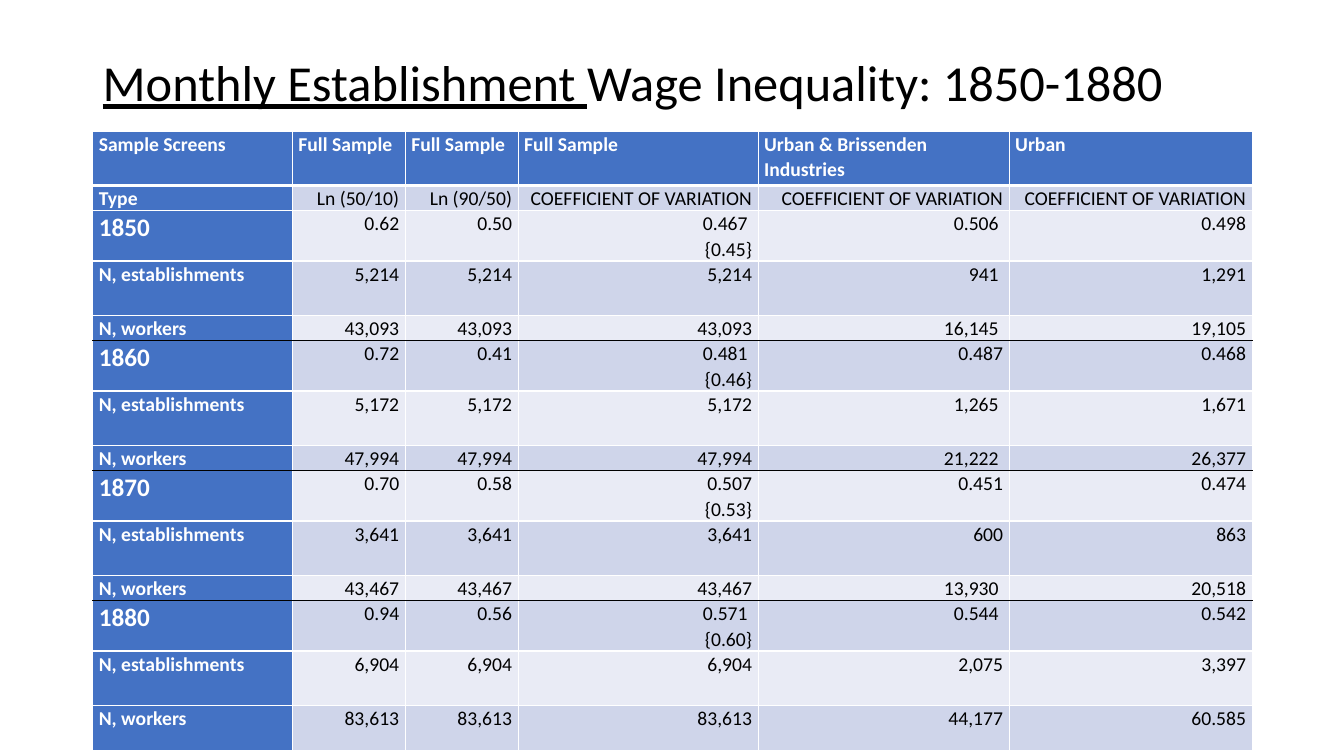
from lxml.etree import SubElement
from pptx import Presentation
from pptx.dml.color import RGBColor
from pptx.enum.text import MSO_ANCHOR, PP_ALIGN
from pptx.oxml.ns import qn
from pptx.util import Inches, Pt

FONT = "Calibri"
BLUE, BAND_DARK, BAND_LIGHT = "4472C4", "CFD5EA", "E9EBF5"
WHITE, BLACK = "FFFFFF", "000000"
COL_WIDTHS = [1.98, 1.12, 1.12, 2.38, 2.49, 2.41]
ROW_HEIGHTS = [0.54] + [0.18, 0.36, 0.54] * 4 + [0.45]
YEARS = ["1850", "1860", "1870", "1880"]
ROWS = [
    ["Sample Screens", "Full Sample", "Full Sample", "Full Sample",
     "Urban & Brissenden Industries", "Urban"],
    ["Type", "Ln (50/10)", "Ln (90/50)"] + ["COEFFICIENT OF VARIATION"] * 3,
    ["1850", "0.62", "0.50", "0.467 \v{0.45}", "0.506 ", "0.498"],
    ["N, establishments"] + ["5,214"] * 3 + ["941 ", "1,291"],
    ["N, workers"] + ["43,093"] * 3 + ["16,145 ", "19,105"],
    ["1860", "0.72", "0.41", "0.481 \v{0.46}", "0.487", "0.468"],
    ["N, establishments"] + ["5,172"] * 3 + ["1,265 ", "1,671"],
    ["N, workers"] + ["47,994"] * 3 + ["21,222 ", "26,377"],
    ["1870", "0.70", "0.58", "0.507\v {0.53}", "0.451", "0.474"],
    ["N, establishments"] + ["3,641"] * 3 + ["600", "863"],
    ["N, workers"] + ["43,467"] * 3 + ["13,930 ", "20,518"],
    ["1880", "0.94", "0.56", "0.571 \v{0.60}", "0.544 ", "0.542"],
    ["N, establishments"] + ["6,904"] * 3 + ["2,075", "3,397"],
    ["N, workers"] + ["83,613"] * 3 + ["44,177", "60.585"],
]


def rgb(color):
    return RGBColor.from_string(color)


def style_run(r, size, color, bold=False):
    r.font.name = FONT
    r.font.size = Pt(size)
    r.font.color.rgb = rgb(color)
    r.font.bold = bold


def set_border(cell, side, color, width):
    ln = SubElement(cell._tc.get_or_add_tcPr(), qn(f"a:ln{side}"), w=str(Pt(width)))
    fill = SubElement(ln, qn("a:solidFill"))
    SubElement(fill, qn("a:srgbClr"), val=color)


def add_title(slide, left, top, width, height):
    tf = slide.shapes.add_textbox(
        Inches(left), Inches(top), Inches(width), Inches(height)).text_frame
    tf.word_wrap = True
    tf.vertical_anchor = MSO_ANCHOR.MIDDLE
    p = tf.paragraphs[0]
    p.line_spacing = 0.9
    for text, underline in [("Monthly Establishment ", True),
                            ("Wage Inequality: 1850-1880", False)]:
        r = p.add_run()
        r.text = text
        style_run(r, 36, BLACK)
        r.font.underline = underline


def fill_cell(cell, text, row, col):
    is_label = row == 0 or col == 0
    opens_year = row > 2 and ROWS[row][0] in YEARS
    closes_year = row + 1 < len(ROWS) and row > 1 and ROWS[row + 1][0] in YEARS
    set_border(cell, "L", WHITE, 1)
    set_border(cell, "R", WHITE, 1)
    set_border(cell, "T", BLACK if opens_year else WHITE, 3 if row == 1 else 1)
    set_border(cell, "B", BLACK if closes_year else WHITE, 3 if row == 0 else 1)
    cell.fill.solid()
    band = BAND_DARK if row % 2 else BAND_LIGHT
    cell.fill.fore_color.rgb = rgb(BLUE if is_label else band)
    cell.margin_left = cell.margin_right = Inches(0.06)
    cell.margin_top = cell.margin_bottom = 0
    cell.text_frame.text = text
    p = cell.text_frame.paragraphs[0]
    p.line_spacing = 1.07
    p.alignment = PP_ALIGN.LEFT if is_label else PP_ALIGN.RIGHT
    for r in p.runs:
        style_run(r, 18 if text in YEARS else 14, WHITE if is_label else BLACK, is_label)


def add_wage_table(slide, left, top, width, height):
    table = slide.shapes.add_table(
        len(ROWS), len(COL_WIDTHS), Inches(left), Inches(top),
        Inches(width), Inches(height)).table
    table.first_col = True
    for column, col_width in zip(table.columns, COL_WIDTHS):
        column.width = Inches(col_width)
    for row, values in enumerate(ROWS):
        table.rows[row].height = Inches(ROW_HEIGHTS[row])
        for col, text in enumerate(values):
            fill_cell(table.cell(row, col), text, row, col)


def main():
    prs = Presentation()
    prs.slide_width = Inches(13.33)
    prs.slide_height = Inches(7.5)
    slide = prs.slides.add_slide(prs.slide_layouts[6])
    add_title(slide, 0.92, 0.27, 11.5, 1.15)
    add_wage_table(slide, 0.92, 1.3, sum(COL_WIDTHS), sum(ROW_HEIGHTS))
    prs.save("out.pptx")


if __name__ == "__main__":
    main()
